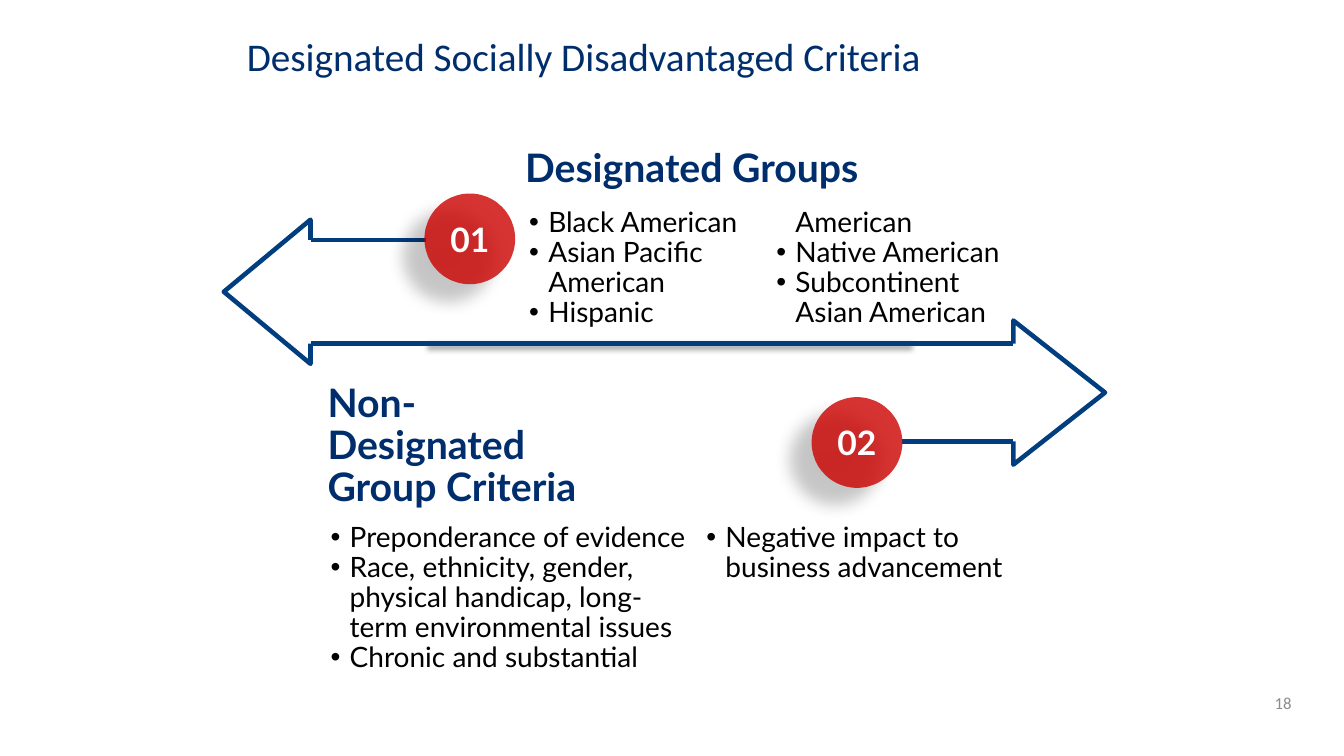
from dataclasses import dataclass

from lxml import etree
from pptx import Presentation
from pptx import util as u
from pptx.dml.color import RGBColor
from pptx.enum import shapes, text
from pptx.oxml.ns import qn

Inches, Pt = u.Inches, u.Pt


@dataclass(frozen=True)
class Theme:
    navy: str = "002E6D"
    outline: str = "003E7F"
    red: str = "CC0000"
    black: str = "000000"
    white: str = "FFFFFF"
    gray: str = "8C8C8C"
    title_font: str = "Calibri"
    body_font: str = "Lato"
    heading_size: int = 28
    badge_size: int = 24
    body_size: int = 20
    number_size: int = 12
    line_width: float = 3.25
    head_half: float = 0.715
    badge_width: float = 0.9
    indent: float = 0.19
    spacing: float = 0.89


class CriteriaSlide:
    def __init__(self, presentation, theme):
        self.theme = theme
        self.slide = presentation.slides.add_slide(presentation.slide_layouts[6])
        self.shapes = self.slide.shapes

    def add_words(self, paragraph, words, size, color, font=None, bold=False):
        run = paragraph.add_run()
        run.text = words
        style = {"size": Pt(size), "name": font or self.theme.body_font, "bold": bold}
        for name, value in style.items():
            setattr(run.font, name, value)
        run.font.color.rgb = RGBColor.from_string(color)

    def frame(self, box, **layout):
        area = self.shapes.add_textbox(*map(Inches, box)).text_frame
        for name, value in {"word_wrap": True, **layout}.items():
            setattr(area, name, value)
        return area

    def label(self, box, words, size, color, font=None, bold=False,
              align=None, spacing=None, **layout):
        paragraph = self.frame(box, **layout).paragraphs[0]
        for name, value in {"alignment": align, "line_spacing": spacing}.items():
            setattr(paragraph, name, value)
        self.add_words(paragraph, words, size, color, font, bold)

    def heading(self, box, words):
        t = self.theme
        self.label(box, words, t.heading_size, t.navy, bold=True, spacing=t.spacing,
                   auto_size=text.MSO_AUTO_SIZE.SHAPE_TO_FIT_TEXT)

    def bullets(self, box, items, gap=0):
        t = self.theme
        area = self.frame(box, auto_size=text.MSO_AUTO_SIZE.SHAPE_TO_FIT_TEXT)
        body = area._txBody.find(qn("a:bodyPr"))
        body.set("numCol", "2")
        body.set("spcCol", str(Inches(gap)))
        for index, item in enumerate(items):
            paragraph = area.add_paragraph() if index else area.paragraphs[0]
            paragraph.line_spacing = t.spacing
            properties = paragraph._p.get_or_add_pPr()
            properties.set("marL", str(Inches(t.indent)))
            properties.set("indent", str(-Inches(t.indent)))
            etree.SubElement(properties, qn("a:buFont"), typeface="Arial")
            etree.SubElement(properties, qn("a:buChar"), char="•")
            self.add_words(paragraph, item, t.body_size, t.black)

    def effects(self, shape, alpha=None, blur=0, distance=0, angle=0):
        """Give the shape an outer shadow, or none when alpha is missing."""
        effect_list = etree.SubElement(shape._element.spPr, qn("a:effectLst"))
        if alpha is None:
            return
        shadow = etree.SubElement(
            effect_list, qn("a:outerShdw"), blurRad=str(Pt(blur)),
            dist=str(Pt(distance)), dir=str(angle * 60000), rotWithShape="0")
        color = etree.SubElement(shadow, qn("a:srgbClr"), val=self.theme.black)
        etree.SubElement(color, qn("a:alpha"), val=str(alpha * 1000))

    def outline(self, shape):
        shape.line.color.rgb = RGBColor.from_string(self.theme.outline)
        shape.line.width = Pt(self.theme.line_width)

    def rule(self, start, end, y, **shadow):
        line = self.shapes.add_connector(
            shapes.MSO_CONNECTOR.STRAIGHT,
            Inches(start), Inches(y), Inches(end), Inches(y))
        self.outline(line)
        self.effects(line, **shadow)

    def arrow(self, tail, base, tip, top, bottom):
        """Open arrow: a head from base to tip and two shaft edges."""
        middle = (top + bottom) / 2
        half = self.theme.head_half
        points = [(base, top), (base, middle - half), (tip, middle),
                  (base, middle + half), (base, bottom)]
        start, *rest = [(Inches(x), Inches(y)) for x, y in points]
        builder = self.shapes.build_freeform(*start)
        builder.add_line_segments(rest, close=False)
        head = builder.convert_to_shape()
        head.fill.background()
        self.outline(head)
        head.shadow.inherit = False
        for edge in (top, bottom):
            self.rule(tail, base, edge)

    def badge(self, left, top, number):
        t = self.theme
        width = Inches(t.badge_width)
        circle = self.shapes.add_shape(
            shapes.MSO_SHAPE.OVAL, Inches(left), Inches(top), width, width)
        circle.fill.solid()
        circle.fill.fore_color.rgb = RGBColor.from_string(t.red)
        color = circle._element.spPr.find(qn("a:solidFill"))[0]
        etree.SubElement(color, qn("a:alpha"), val="80000")
        circle.line.fill.background()
        self.effects(circle, alpha=28, blur=11.8, distance=19.7, angle=141)
        area = circle.text_frame
        area.word_wrap = False
        area.vertical_anchor = text.MSO_ANCHOR.MIDDLE
        area.paragraphs[0].alignment = text.PP_ALIGN.CENTER
        self.add_words(area.paragraphs[0], number, t.badge_size, t.white, bold=True)


def main():
    presentation = Presentation()
    presentation.slide_width = Inches(13.33)
    presentation.slide_height = Inches(7.5)
    theme = Theme()
    page = CriteriaSlide(presentation, theme)
    middle = text.MSO_ANCHOR.MIDDLE

    # Title and page number
    page.label((2.35, 0.26, 8.62, 0.65), "Designated Socially Disadvantaged Criteria",
               theme.heading_size, theme.navy, theme.title_font,
               spacing=0.9, vertical_anchor=middle)
    page.label((9.91, 6.77, 3, 0.4), "18", theme.number_size, theme.gray,
               theme.title_font, align=text.PP_ALIGN.RIGHT, vertical_anchor=middle)

    # Designated groups, with the arrow to the left
    page.heading((5.11, 1.43, 5.52, 0.52), "Designated Groups")
    page.rule(4.21, 9.01, 3.41, alpha=40, blur=4, distance=3, angle=45)
    page.arrow(tail=4.23, base=3.08, tip=2.22, top=2.38, bottom=3.41)
    page.badge(4.21, 1.92, "01")
    page.bullets((5.15, 2.02, 5.1, 1.3), [
        "Black American",
        "Asian Pacific American",
        "Hispanic American",
        "Native American",
        "Subcontinent Asian American",
    ])

    # Non-designated criteria, with the arrow to the right
    page.arrow(tail=8.95, base=10.05, tip=10.96, top=3.41, bottom=4.38)
    page.badge(8.05, 3.94, "02")
    page.heading((3.15, 3.76, 3.01, 0.94), "Non-Designated Group Criteria")
    page.bullets((3.18, 5.15, 7.45, 1.6), [
        "Preponderance of evidence",
        "Race, ethnicity, gender, physical handicap, long-term environmental issues",
        "Chronic and substantial",
        "Negative impact to business advancement",
    ], gap=0.2)

    presentation.save("out.pptx")


if __name__ == "__main__":
    main()
